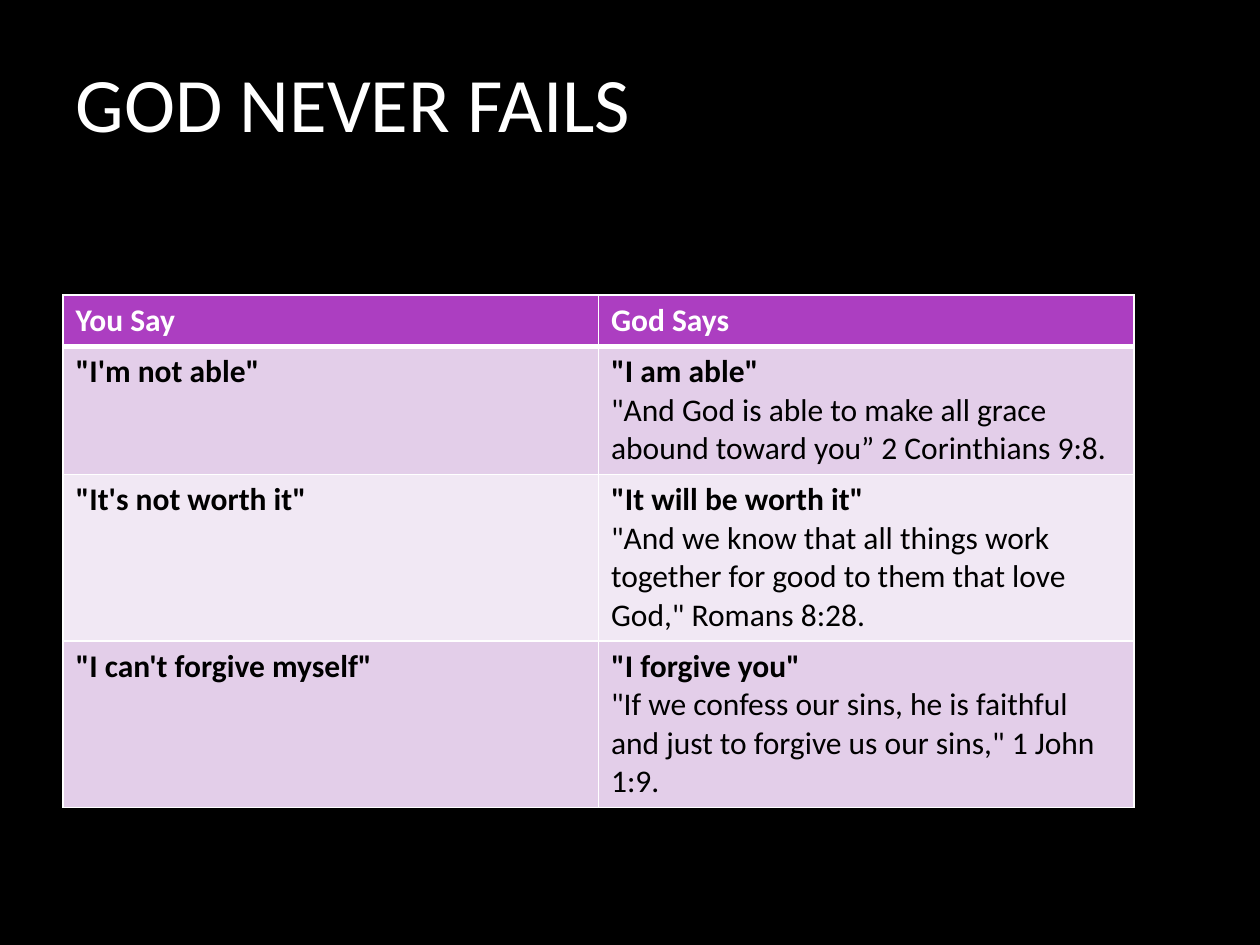
from dataclasses import dataclass

import pptx
import pptx.dml.color
import pptx.enum.text
import pptx.oxml
import pptx.oxml.ns
import pptx.util

RGBColor = pptx.dml.color.RGBColor
BLACK = RGBColor(0x00, 0x00, 0x00)
WHITE = RGBColor(0xFF, 0xFF, 0xFF)
PURPLE = RGBColor(0xAC, 0x3E, 0xC1)
LILAC = RGBColor(0xE3, 0xCE, 0xE9)
PALE_LILAC = RGBColor(0xF1, 0xE8, 0xF4)

FONT = "Calibri"
WIDTH, HEIGHT = pptx.util.Inches(10), pptx.util.Inches(7.5)
LEFT, CONTENT_WIDTH = int(WIDTH * 0.05), int(WIDTH * 0.85)
ROW_HEIGHT = pptx.util.Inches(0.41)
THIN, THICK = 1, 3


@dataclass
class Saying:
    doubt: str
    promise: str
    verse: str


SAYINGS = [
    Saying('"I\'m not able"', '"I am able"',
           '"And God is able to make all grace abound toward you” 2 Corinthians 9:8.'),
    Saying('"It\'s not worth it"', '"It will be worth it"',
           '"And we know that all things work together for good to them that love God," Romans 8:28.'),
    Saying('"I can\'t forgive myself"', '"I forgive you"',
           '"If we confess our sins, he is faithful and just to forgive us our sins," 1 John 1:9.'),
]


def add_span(para, text: str, size: int, color: RGBColor, bold: bool = False) -> None:
    span = para.add_run()
    span.text = text
    span.font.name = FONT
    span.font.size = pptx.util.Pt(size)
    span.font.bold = bold
    span.font.color.rgb = color


def set_borders(cell, top: int, bottom: int) -> None:
    properties = cell._tc.get_or_add_tcPr()
    widths = {"lnL": THIN, "lnR": THIN, "lnT": top, "lnB": bottom}
    for index, (side, points) in enumerate(widths.items()):
        properties.insert(index, pptx.oxml.parse_xml(
            f'<a:{side} {pptx.oxml.ns.nsdecls("a")} w="{pptx.util.Pt(points)}">'
            f'<a:solidFill><a:srgbClr val="{WHITE}"/></a:solidFill></a:{side}>'))


def fill_cell(cell, fill: RGBColor, color: RGBColor, heading: str, verse: str = "",
              top: int = THIN, bottom: int = THIN) -> None:
    cell.fill.solid()
    cell.fill.fore_color.rgb = fill
    set_borders(cell, top, bottom)
    para = cell.text_frame.paragraphs[0]
    add_span(para, heading, 18, color, bold=True)
    if verse:
        para.add_line_break()
        add_span(para, verse, 18, color)


def add_title(page, text: str) -> None:
    box = page.shapes.title
    box.left, box.top = LEFT, pptx.util.Inches(0.01)
    box.width, box.height = CONTENT_WIDTH, pptx.util.Inches(1.59)
    box.text_frame.vertical_anchor = pptx.enum.text.MSO_ANCHOR.MIDDLE
    para = box.text_frame.paragraphs[0]
    para.alignment = pptx.enum.text.PP_ALIGN.LEFT
    add_span(para, text, 44, WHITE)


def add_sayings(page, sayings: list[Saying]) -> None:
    row_count = len(sayings) + 1
    table = page.shapes.add_table(row_count, 2, LEFT, pptx.util.Inches(2.34),
                                  CONTENT_WIDTH, ROW_HEIGHT * row_count).table
    # Header row
    for column, heading in enumerate(("You Say", "God Says")):
        fill_cell(table.cell(0, column), PURPLE, WHITE, heading, bottom=THICK)
    # Banded body rows
    for row, saying in enumerate(sayings, start=1):
        fill = LILAC if row % 2 else PALE_LILAC
        top = THICK if row == 1 else THIN
        fill_cell(table.cell(row, 0), fill, BLACK, saying.doubt, top=top)
        fill_cell(table.cell(row, 1), fill, BLACK, saying.promise, saying.verse, top=top)


def main() -> None:
    deck = pptx.Presentation()
    deck.slide_width, deck.slide_height = WIDTH, HEIGHT
    page = deck.slides.add_slide(deck.slide_layouts[5])  # Title only
    page.background.fill.solid()
    page.background.fill.fore_color.rgb = BLACK
    add_title(page, "GOD NEVER FAILS")
    add_sayings(page, SAYINGS)
    deck.save("out.pptx")


if __name__ == "__main__":
    main()
